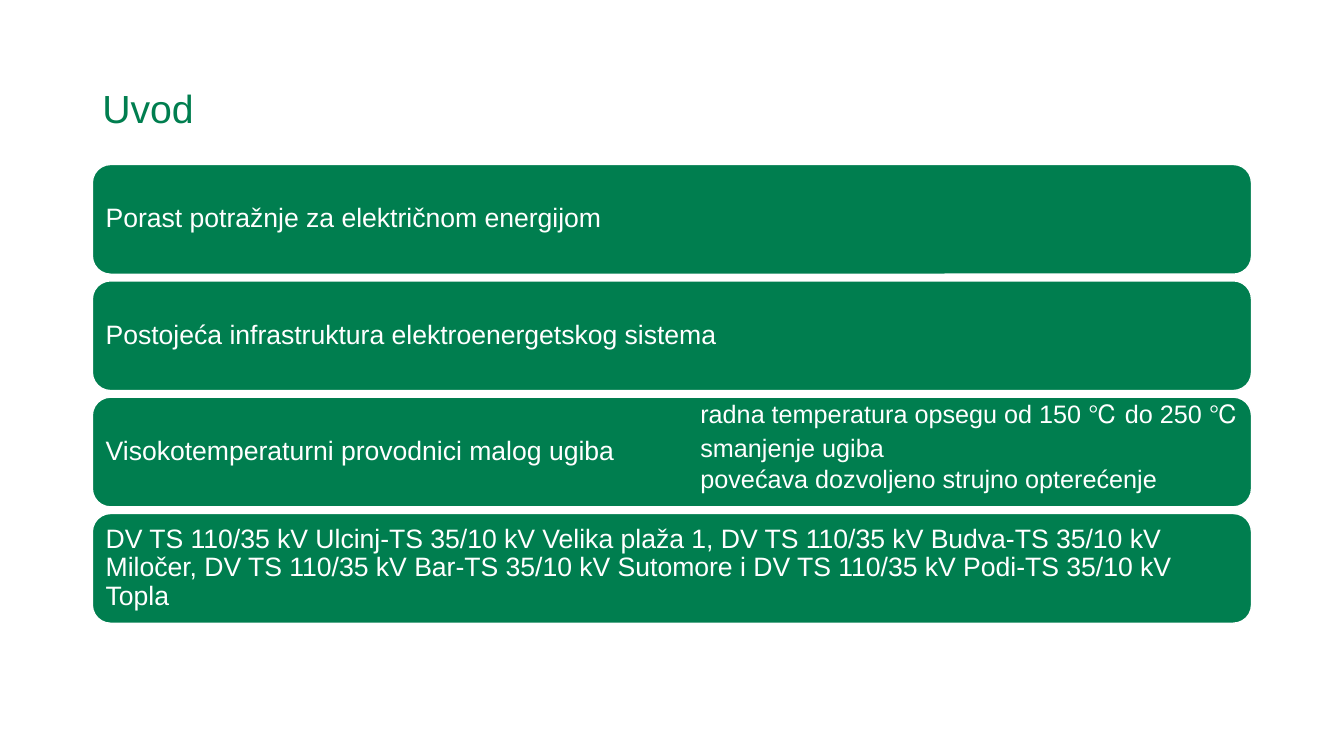
from dataclasses import dataclass

from pptx import Presentation
from pptx.dml.color import RGBColor
from pptx.enum import shapes, text
from pptx.util import Pt


@dataclass(frozen=True)
class Theme:
    """Colours, font and type sizes."""
    green: str = "007E4F"
    white: str = "FFFFFF"
    font: str = "Arial"
    title: float = 28
    body: float = 19
    note: float = 18


class Deck:
    """Draws styled elements on the current slide."""

    def __init__(self, theme):
        """Open a deck with one blank slide."""
        self.theme = theme
        self.prs = Presentation()
        self.prs.slide_width, self.prs.slide_height = Pt(960), Pt(540)
        self.slide = self.prs.slides.add_slide(self.prs.slide_layouts[6])

    def style(self, shape, words, size, color, space=1.0, **frame):
        """Fill a shape with one styled paragraph."""
        body = shape.text_frame
        for key, val in {"word_wrap": True, **frame}.items():
            setattr(body, key, val)
        par = body.paragraphs[0]
        par.text = words
        par.alignment = text.PP_ALIGN.LEFT
        par.line_spacing = space
        look = {"name": self.theme.font, "size": Pt(size)}
        for key, val in look.items():
            setattr(par.runs[0].font, key, val)
        par.runs[0].font.color.rgb = RGBColor.from_string(color)

    def label(self, words, box, size, color, **looks):
        """Add a text box."""
        shape = self.slide.shapes.add_textbox(*map(Pt, box))
        self.style(shape, words, size, color, **looks)

    def bar(self, words, box):
        """Add a rounded bar with its text."""
        shape = self.slide.shapes.add_shape(
            shapes.MSO_SHAPE.ROUNDED_RECTANGLE, *map(Pt, box))
        shape.shadow.inherit = False
        shape.fill.solid()
        shape.fill.fore_color.rgb = RGBColor.from_string(self.theme.green)
        shape.line.color.rgb = RGBColor.from_string(self.theme.white)
        shape.line.width = Pt(1)
        sides = ("left", "top", "right", "bottom")
        inset = {f"margin_{side}": Pt(5.7) for side in sides}
        self.style(shape, words, self.theme.body, self.theme.white, 0.9,
                   vertical_anchor=text.MSO_ANCHOR.MIDDLE, **inset)


BARS = [
    "Porast potražnje za električnom energijom",
    "Postojeća infrastruktura elektroenergetskog sistema",
    "Visokotemperaturni provodnici malog ugiba",
    "DV TS 110/35 kV Ulcinj-TS 35/10 kV Velika plaža 1, "
    "DV TS 110/35 kV Budva-TS 35/10 kV Miločer, "
    "DV TS 110/35 kV Bar-TS 35/10 kV Sutomore i "
    "DV TS 110/35 kV Podi-TS 35/10 kV Topla",
]
NOTES = [
    ("radna temperatura opsegu od 150 ℃ do 250 ℃", 280.8, 401),
    ("smanjenje ugiba", 305.3, 401),
    ("povećava dozvoljeno strujno opterećenje", 327.6, 370),
]


def main():
    """Build the slide and save it."""
    theme = Theme()
    deck = Deck(theme)
    deck.label("Uvod", (66, 49.5, 828, 59), theme.title, theme.green,
               space=0.9, vertical_anchor=text.MSO_ANCHOR.MIDDLE)
    for row, words in enumerate(BARS):
        deck.bar(words, (66, 117.5 + 83.1 * row, 828, 78.4))
    for words, top, wide in NOTES:
        deck.label(words, (493.2, top, wide, 29), theme.note, theme.white,
                   auto_size=text.MSO_AUTO_SIZE.SHAPE_TO_FIT_TEXT)
    deck.prs.save("out.pptx")


if __name__ == "__main__":
    main()
